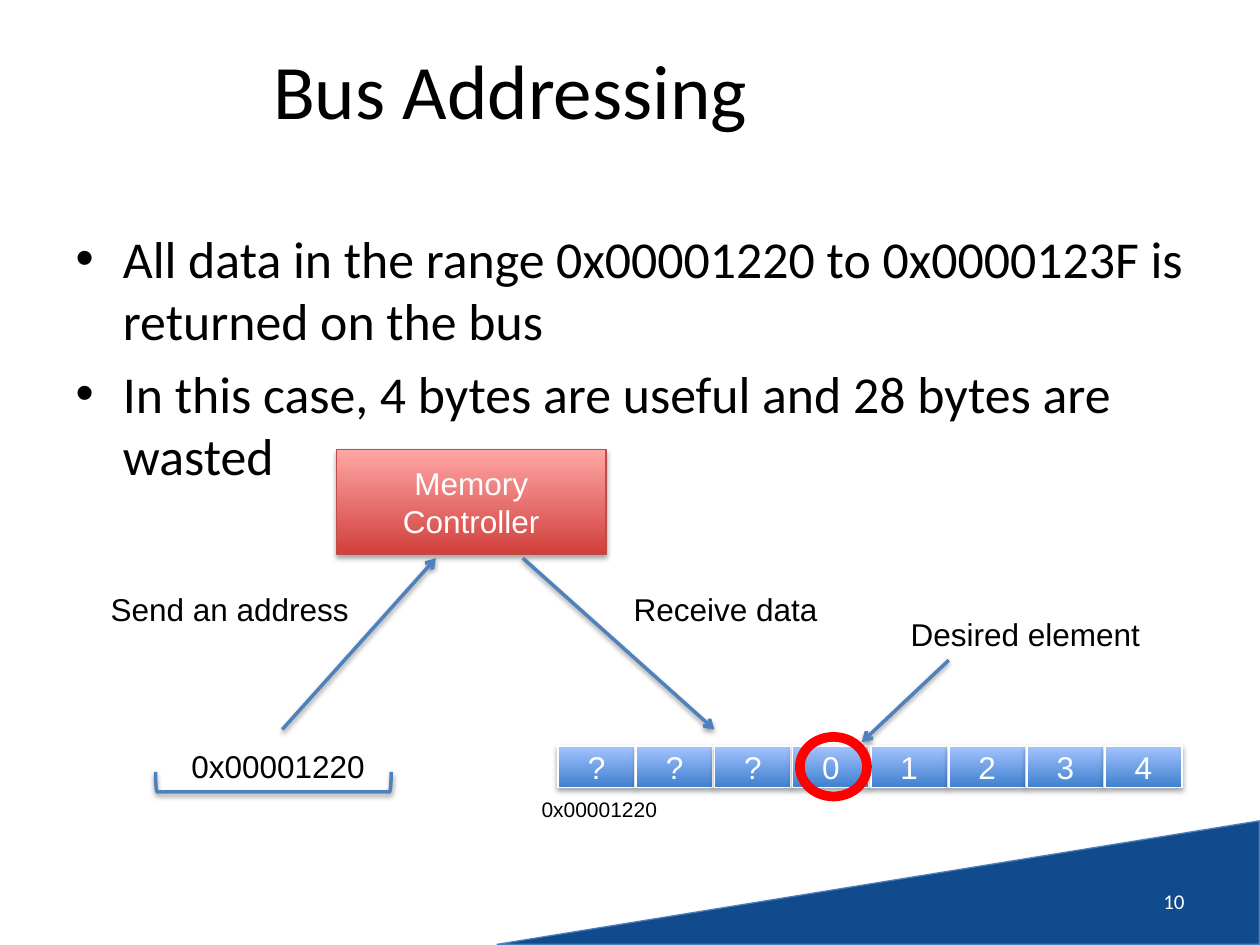
"""Build the slide on bus addressing."""
from lxml import etree
from pptx import Presentation
from pptx.dml.color import RGBColor
from pptx.enum.shapes import MSO_CONNECTOR, MSO_SHAPE
from pptx.enum.text import MSO_ANCHOR, MSO_AUTO_SIZE, PP_ALIGN
from pptx.oxml.ns import qn
from pptx.util import Inches, Pt

RECT = MSO_SHAPE.RECTANGLE
WEDGE = MSO_SHAPE.RIGHT_TRIANGLE
BRACKET = MSO_SHAPE.LEFT_BRACKET
RING = MSO_SHAPE.DONUT
LINE = MSO_CONNECTOR.STRAIGHT
MIDDLE = MSO_ANCHOR.MIDDLE
FIXED = MSO_AUTO_SIZE.NONE
CENTER, LEFT, RIGHT = PP_ALIGN.CENTER, PP_ALIGN.LEFT, PP_ALIGN.RIGHT

COLORS = {
    "black": "000000", "white": "FFFFFF", "red": "FF0000",
    "navy": "114B8E", "edge": "4B7EBC", "blue": "4F81BD",
    "cell_low": "3F80CE", "cell_top": "A4C4FF",
    "box_low": "D1403C", "box_top": "FFA6A5", "box_edge": "BF4C48",
}
POINTS = [
    "All data in the range 0x00001220 to 0x0000123F is returned on the bus",
    "In this case, 4 bytes are useful and 28 bytes are wasted",
]
LABELS = [
    ("0x00001220", 1.42, 5.88, 1.59, 0.4, 18),
    ("Send an address", 0.78, 4.63, 2.11, 0.4, 18),
    ("Receive data", 4.93, 4.63, 1.68, 0.4, 18),
    ("0x00001220", 4.2, 6.27, 1.13, 0.3, 12),
    ("Desired element", 7.13, 4.83, 2.04, 0.4, 18),
]
ARROWS = [
    (2.24, 5.79, 3.46, 4.43),
    (4.15, 4.43, 5.67, 5.79),
    (7.53, 5.24, 6.84, 5.89),
]
CELLS = "???01234"
CELL_X, CELL_STEP = 4.43, 0.62


def rgb(name):
    return RGBColor.from_string(COLORS[name])


def style(par, size, color="black", font="Calibri", align=None):
    par.font.size = Pt(size)
    par.font.name = font
    par.font.color.rgb = rgb(color)
    if align is not None:
        par.alignment = align


def place(shape, *box):
    shape.left, shape.top, shape.width, shape.height = map(Inches, box)


def stroke(shape, color, width):
    shape.line.color.rgb = rgb(color)
    shape.line.width = Pt(width)


def shade(shape, alpha=35, dist=1.8):
    effects = etree.SubElement(shape._element.spPr, qn("a:effectLst"))
    drop = etree.SubElement(
        effects, qn("a:outerShdw"), blurRad=str(Pt(3.1)),
        dist=str(Pt(dist)), dir="5400000", rotWithShape="0")
    tint = etree.SubElement(drop, qn("a:srgbClr"), val=COLORS["black"])
    etree.SubElement(tint, qn("a:alpha"), val=str(alpha * 1000))


def add_shape(slide, kind, box, turn=0):
    shape = slide.shapes.add_shape(kind, *map(Inches, box))
    shape.rotation = turn
    return shape


def add_block(slide, text, box, low, top, edge, width):
    block = add_shape(slide, RECT, box)
    block.fill.gradient()
    block.fill.gradient_angle = 90
    for stop, color in zip(block.fill.gradient_stops, (low, top)):
        stop.color.rgb = rgb(color)
        stop.position = 0 if color == low else 1
    stroke(block, edge, width)
    shade(block)
    frame = block.text_frame
    frame.text = text
    frame.vertical_anchor = MIDDLE
    style(frame.paragraphs[0], 18, "white", "Arial", CENTER)


def add_label(slide, text, x, y, w, h, size):
    frame = slide.shapes.add_textbox(*map(Inches, (x, y, w, h))).text_frame
    frame.word_wrap = False
    frame.text = text
    style(frame.paragraphs[0], size, font="Arial", align=LEFT)


def add_arrow(slide, *ends):
    arrow = slide.shapes.add_connector(LINE, *map(Inches, ends))
    stroke(arrow, "blue", 2)
    line = arrow._element.spPr.find(qn("a:ln"))
    etree.SubElement(line, qn("a:tailEnd"), type="arrow")
    shade(arrow, 38, 1.6)


def add_wedge(slide):
    wedge = add_shape(slide, WEDGE, (6.48, 3.98, 0.98, 6.05), 270)
    wedge.fill.solid()
    wedge.fill.fore_color.rgb = rgb("navy")
    stroke(wedge, "edge", 0.75)
    shade(wedge)


def add_brace(slide):
    brace = add_shape(slide, BRACKET, (2.09, 5.27, 0.16, 1.87), 270)
    brace.fill.background()
    stroke(brace, "blue", 2)
    shade(brace, 38, 1.6)


def add_ring(slide):
    ring = add_shape(slide, RING, (6.31, 5.81, 0.61, 0.55))
    ring.adjustments[0] = 0.14
    ring.fill.solid()
    ring.fill.fore_color.rgb = rgb("red")
    ring.line.fill.background()
    ring.shadow.inherit = False


def add_number(slide):
    box = slide.shapes.add_textbox(*map(Inches, (7.17, 6.95, 2.33, 0.4)))
    frame = box.text_frame
    frame.word_wrap = True
    frame.vertical_anchor = MIDDLE
    frame.text = "10"
    style(frame.paragraphs[0], 12, "white", align=RIGHT)


def fill_text(slide):
    title, body = slide.placeholders
    place(title, 0.5, 0.08, 7.1, 1.25)
    title.text_frame.text = "Bus Addressing"
    title.text_frame.vertical_anchor = MIDDLE
    style(title.text_frame.paragraphs[0], 44, align=CENTER)
    place(body, 0.5, 1.75, 9, 1.86)
    body.text_frame.text = "\n".join(POINTS)
    for par in body.text_frame.paragraphs:
        style(par, 29.6)
    body.text_frame.paragraphs[0].space_before = Pt(0)
    for holder in (title, body):
        holder.text_frame.auto_size = FIXED


def main():
    deck = Presentation()
    deck.slide_width, deck.slide_height = Inches(10), Inches(7.5)
    slide = deck.slides.add_slide(deck.slide_layouts[1])
    add_wedge(slide)
    fill_text(slide)
    add_number(slide)
    for i, text in enumerate(CELLS):
        box = (CELL_X + i * CELL_STEP, 5.92, 0.61, 0.33)
        add_block(slide, text, box, "cell_low", "cell_top", "white", 1)
    add_brace(slide)
    add_block(slide, "Memory Controller", (2.67, 3.57, 2.14, 0.83),
              "box_low", "box_top", "box_edge", 0.75)
    for label in LABELS:
        add_label(slide, *label)
    add_ring(slide)
    for ends in ARROWS:
        add_arrow(slide, *ends)
    deck.save("out.pptx")


if __name__ == "__main__":
    main()
